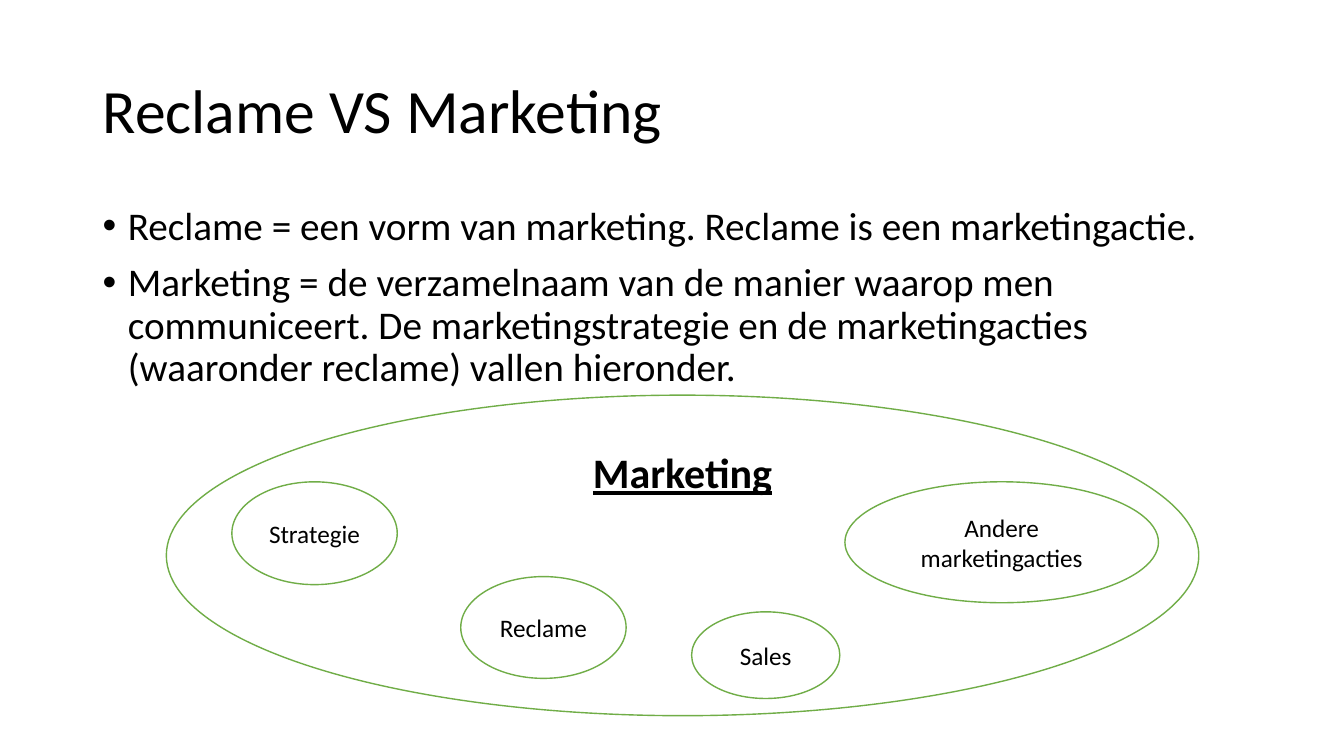
"""Build a slide that places advertising inside the wider field of marketing."""
from dataclasses import dataclass

from lxml import etree
from pptx import Presentation
from pptx.dml.color import RGBColor
from pptx.enum.shapes import MSO_SHAPE
from pptx.enum.text import MSO_ANCHOR, MSO_AUTO_SIZE, PP_ALIGN
from pptx.oxml.ns import qn
from pptx.slide import Slide
from pptx.text.text import TextFrame, _Paragraph
from pptx.util import Inches, Pt

ELLIPSE = MSO_SHAPE.OVAL
TOP, MIDDLE = MSO_ANCHOR.TOP, MSO_ANCHOR.MIDDLE
LEFT, CENTER = PP_ALIGN.LEFT, PP_ALIGN.CENTER
NO_AUTO_SIZE = MSO_AUTO_SIZE.NONE
TITLE_ONLY_LAYOUT = 5


@dataclass(frozen=True)
class Theme:
    font: str = "Calibri"
    text: RGBColor = RGBColor(0x00, 0x00, 0x00)
    fill: RGBColor = RGBColor(0xFF, 0xFF, 0xFF)
    outline: RGBColor = RGBColor(0x70, 0xAD, 0x47)
    outline_width: float = 1
    title_size: int = 44
    body_size: int = 28
    heading_size: int = 30
    label_size: int = 18
    line_spacing: float = 0.9
    bullet_space: int = 10
    bullet_indent: float = 0.25


@dataclass(frozen=True)
class Box:
    left: float
    top: float
    width: float
    height: float

    def lengths(self) -> tuple[Inches, Inches, Inches, Inches]:
        return Inches(self.left), Inches(self.top), Inches(self.width), Inches(self.height)


@dataclass(frozen=True)
class Bubble:
    label: str
    box: Box
    is_heading: bool = False


THEME = Theme()
TITLE = "Reclame VS Marketing"
TITLE_BOX = Box(0.92, 0.4, 11.5, 1.45)
BODY_BOX = Box(0.92, 2, 11.5, 4.76)
BULLETS = (
    "Reclame = een vorm van marketing. Reclame is een marketingactie.",
    "Marketing = de verzamelnaam van de manier waarop men communiceert. "
    "De marketingstrategie en de marketingacties (waaronder reclame) vallen hieronder.",
)
BUBBLES = (
    Bubble("Marketing", Box(1.65, 3.92, 10.24, 3.18), is_heading=True),
    Bubble("Reclame", Box(4.57, 5.72, 1.64, 1.01)),
    Bubble("Sales", Box(6.86, 6.07, 1.47, 0.86)),
    Bubble("Andere marketingacties", Box(8.38, 4.78, 3.11, 1.2)),
    Bubble("Strategie", Box(2.3, 4.78, 1.64, 1.02)),
)


def add_run(paragraph: _Paragraph, text: str, size: int, emphasis: bool = False) -> None:
    run = paragraph.add_run()
    run.text = text
    run.font.name = THEME.font
    run.font.size = Pt(size)
    run.font.color.rgb = THEME.text
    run.font.bold = emphasis
    run.font.underline = emphasis


def prepare_frame(frame: TextFrame, anchor: MSO_ANCHOR) -> None:
    frame.word_wrap = True
    frame.auto_size = NO_AUTO_SIZE
    frame.vertical_anchor = anchor


def set_bullet(paragraph: _Paragraph) -> None:
    properties = paragraph._p.get_or_add_pPr()
    indent = Inches(THEME.bullet_indent)
    properties.set("marL", str(indent))
    properties.set("indent", str(-indent))
    etree.SubElement(properties, qn("a:buFont")).set("typeface", "Arial")
    etree.SubElement(properties, qn("a:buChar")).set("char", "•")


def add_title(slide: Slide) -> None:
    title = slide.shapes.title
    title.left, title.top, title.width, title.height = TITLE_BOX.lengths()
    prepare_frame(title.text_frame, MIDDLE)
    paragraph = title.text_frame.paragraphs[0]
    paragraph.alignment = LEFT
    paragraph.line_spacing = THEME.line_spacing
    add_run(paragraph, TITLE, THEME.title_size)


def add_bullets(slide: Slide) -> None:
    frame = slide.shapes.add_textbox(*BODY_BOX.lengths()).text_frame
    prepare_frame(frame, TOP)
    for index, text in enumerate(BULLETS):
        paragraph = frame.add_paragraph() if index else frame.paragraphs[0]
        paragraph.line_spacing = THEME.line_spacing
        paragraph.space_before = Pt(THEME.bullet_space)
        set_bullet(paragraph)
        add_run(paragraph, text, THEME.body_size)


def add_bubble(slide: Slide, bubble: Bubble) -> None:
    shape = slide.shapes.add_shape(ELLIPSE, *bubble.box.lengths())
    shape.shadow.inherit = False
    shape.fill.solid()
    shape.fill.fore_color.rgb = THEME.fill
    shape.line.color.rgb = THEME.outline
    shape.line.width = Pt(THEME.outline_width)
    prepare_frame(shape.text_frame, TOP if bubble.is_heading else MIDDLE)
    paragraph = shape.text_frame.paragraphs[0]
    paragraph.alignment = CENTER
    size = THEME.heading_size if bubble.is_heading else THEME.label_size
    add_run(paragraph, bubble.label, size, bubble.is_heading)


def main() -> None:
    presentation = Presentation()
    presentation.slide_width = Inches(13.33)
    presentation.slide_height = Inches(7.5)
    slide = presentation.slides.add_slide(presentation.slide_layouts[TITLE_ONLY_LAYOUT])
    add_title(slide)
    add_bullets(slide)
    for bubble in BUBBLES:
        add_bubble(slide, bubble)
    presentation.save("out.pptx")


if __name__ == "__main__":
    main()
